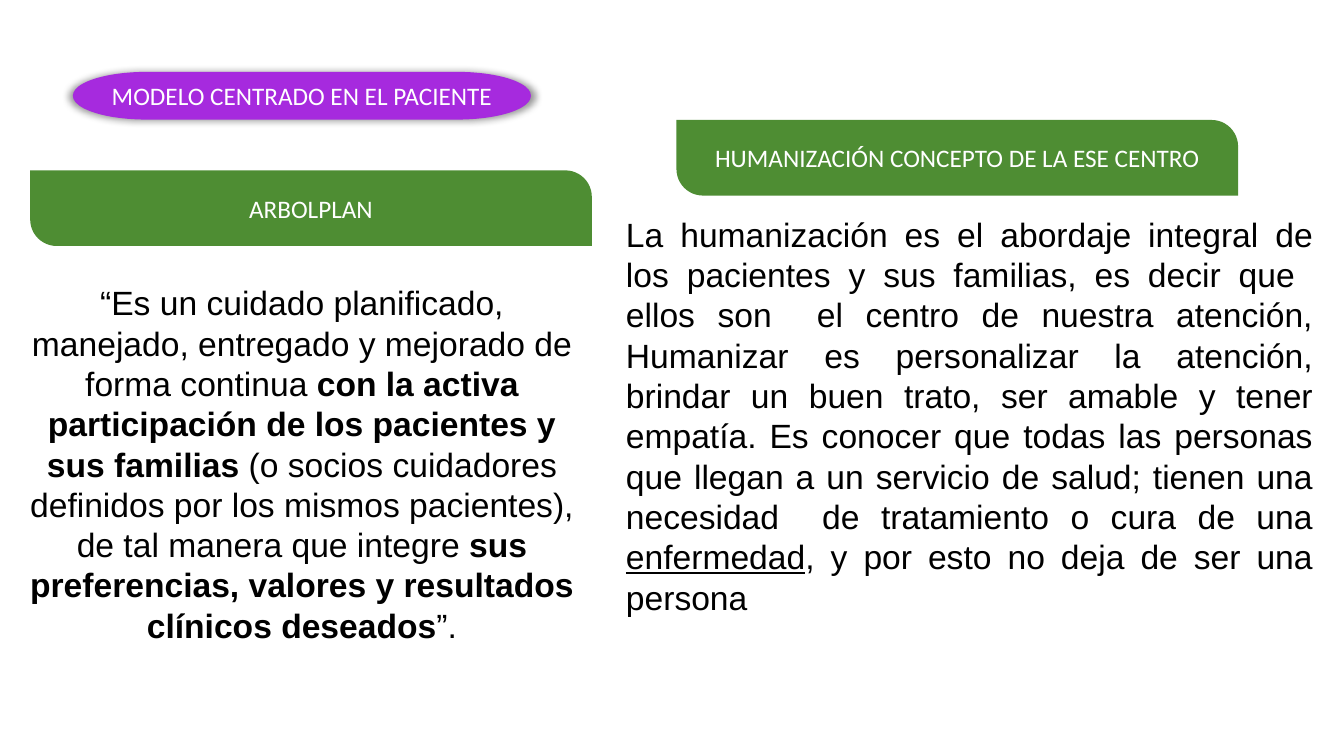
from lxml.etree import SubElement
from pptx import Presentation
from pptx.dml.color import RGBColor
from pptx.enum.shapes import MSO_SHAPE
from pptx.enum.text import MSO_ANCHOR, MSO_AUTO_SIZE, PP_ALIGN
from pptx.oxml.ns import qn
from pptx.util import Inches, Pt

PURPLE = RGBColor(0xA6, 0x2A, 0xDE)
GREEN = RGBColor(0x4E, 0x8D, 0x33)
WHITE = RGBColor(0xFF, 0xFF, 0xFF)
BLACK = RGBColor(0x00, 0x00, 0x00)

TITLE = ("MODELO CENTRADO EN EL PACIENTE", (0.73, 0.72, 4.53, 0.46))

BANNER_SIZE = (5.57, 0.75)
BANNERS = [
    ("HUMANIZACIÓN CONCEPTO DE LA ESE CENTRO", (6.71, 1.19)),
    ("ARBOLPLAN", (0.3, 1.69)),
]

# Each body: position, alignment, spans of (text, style)
BODIES = [
    ((0.11, 2.75, 5.77, 3.74), PP_ALIGN.CENTER, [
        ("“Es un cuidado planificado, manejado, entregado y mejorado "
         "de forma continua ", None),
        ("con la activa participación de los pacientes y sus familias ", "bold"),
        ("(o socios cuidadores definidos por los mismos pacientes), "
         "de tal manera que integre ", None),
        ("sus preferencias, valores y resultados clínicos deseados", "bold"),
        ("”.", None),
    ]),
    ((6.11, 2.07, 7.01, 4.14), PP_ALIGN.JUSTIFY, [
        ("La humanización es el abordaje integral de los pacientes y sus "
         "familias, es decir que  ellos son  el centro de nuestra atención, "
         "Humanizar es personalizar la atención, brindar un buen trato, ser "
         "amable y tener empatía. Es conocer que todas las personas que llegan "
         "a un servicio de salud; tienen una necesidad  de tratamiento o cura "
         "de una ", None),
        ("enfermedad", "underline"),
        (", y por esto no deja de ser una persona", None),
    ]),
]


def add_label(page, preset, place, text, fill):
    """Add a filled shape with a centred white caption."""
    shape = page.shapes.add_shape(preset, *map(Inches, place))
    shape.shadow.inherit = False
    shape.fill.solid()
    shape.fill.fore_color.rgb = fill
    shape.line.fill.background()
    frame = shape.text_frame
    frame.word_wrap = True
    frame.vertical_anchor = MSO_ANCHOR.MIDDLE
    frame.text = text
    para = frame.paragraphs[0]
    para.alignment = PP_ALIGN.CENTER
    para.font.name = "Calibri"
    para.font.size = Pt(18)
    para.font.color.rgb = WHITE
    return shape


def add_soft_shadow(shape):
    effects = shape.element.spPr.find(qn("a:effectLst"))
    shadow = SubElement(effects, qn("a:outerShdw"), blurRad="63500",
                        sx="102000", sy="102000", algn="ctr", rotWithShape="0")
    color = SubElement(shadow, qn("a:srgbClr"), val="000000")
    SubElement(color, qn("a:alpha"), val="40000")


def add_body(page, place, alignment, spans):
    box = page.shapes.add_textbox(*map(Inches, place))
    frame = box.text_frame
    frame.word_wrap = True
    frame.auto_size = MSO_AUTO_SIZE.SHAPE_TO_FIT_TEXT
    para = frame.paragraphs[0]
    para.alignment = alignment
    for text, style in spans:
        span = para.add_run()
        span.text = text
        span.font.name = "Arial"
        span.font.size = Pt(24)
        span.font.color.rgb = BLACK
        span.font.bold = style == "bold"
        span.font.underline = style == "underline"


def main():
    deck = Presentation()
    deck.slide_width, deck.slide_height = Inches(13.33), Inches(7.5)
    page = deck.slides.add_slide(deck.slide_layouts[6])

    text, place = TITLE
    title = add_label(page, MSO_SHAPE.FLOWCHART_TERMINATOR, place, text, PURPLE)
    title.line.color.rgb = PURPLE
    title.line.width = Pt(1)
    add_soft_shadow(title)

    for body in BODIES:
        add_body(page, *body)

    for text, corner in BANNERS:
        banner = add_label(page, MSO_SHAPE.ROUND_2_DIAG_RECTANGLE,
                           corner + BANNER_SIZE, text, GREEN)
        banner.adjustments[0] = 0
        banner.adjustments[1] = 0.35

    deck.save("out.pptx")


if __name__ == "__main__":
    main()
